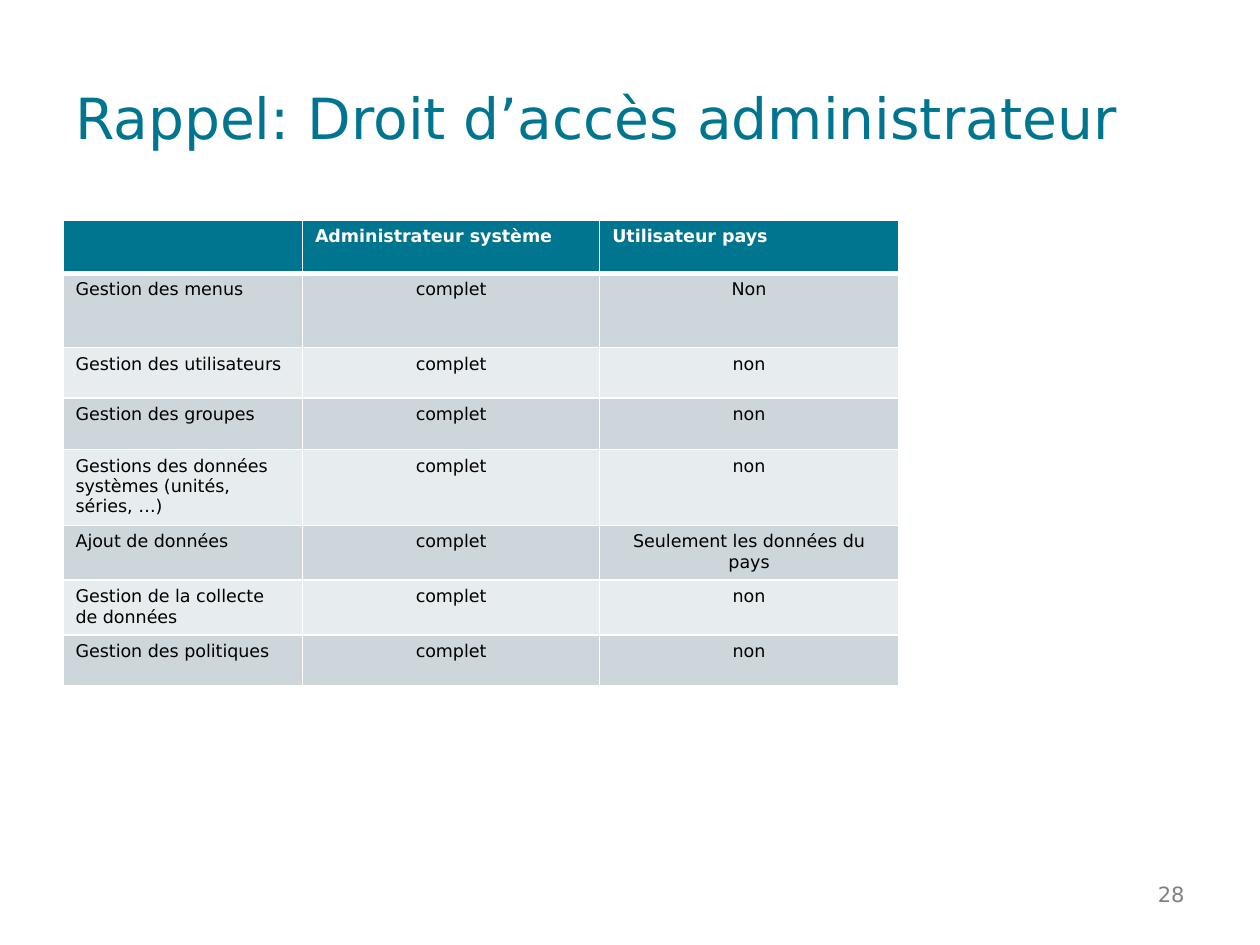
from dataclasses import dataclass

from lxml import etree
from pptx import Presentation
from pptx.dml.color import RGBColor
from pptx.enum.text import MSO_ANCHOR, PP_ALIGN
from pptx.oxml.ns import qn
from pptx.util import Inches, Pt

LEFT, CENTER, RIGHT = PP_ALIGN.LEFT, PP_ALIGN.CENTER, PP_ALIGN.RIGHT
MIDDLE = MSO_ANCHOR.MIDDLE
BLANK_LAYOUT = 6

TITLE = "Rappel: Droit d’accès administrateur"
PAGE_NUMBER = "28"
HEADER = ("", "Administrateur système", "Utilisateur pays")
RIGHTS = [
    ("Gestion des menus", "complet", "Non"),
    ("Gestion des utilisateurs", "complet", "non"),
    ("Gestion des groupes", "complet", "non"),
    ("Gestions des données systèmes (unités, séries, …)", "complet", "non"),
    ("Ajout de données", "complet", "Seulement les données du pays"),
    ("Gestion de la collecte de données", "complet", "non"),
    ("Gestion des politiques", "complet", "non"),
]
COLUMN_WIDTHS = (1.9, 2.36, 2.37)
ROW_HEIGHTS = (0.42, 0.59, 0.4, 0.41, 0.59, 0.42, 0.42, 0.4)


@dataclass(frozen=True)
class Theme:
    font: str = "DejaVu Sans"
    accent: str = "00758F"
    bands: tuple = ("CCD6DB", "E7ECEE")
    white: str = "FFFFFF"
    black: str = "000000"
    muted: str = "808080"
    title_size: float = 32.4
    table_size: float = 10
    number_size: float = 12
    border: float = 1
    header_rule: float = 3


THEME = Theme()


def write(text_frame, text, size, color, alignment=LEFT, bold=False):
    text_frame.text = text
    paragraph = text_frame.paragraphs[0]
    paragraph.alignment = alignment
    for run in paragraph.runs:
        run.font.name = THEME.font
        run.font.size = Pt(size)
        run.font.bold = bold
        run.font.color.rgb = RGBColor.from_string(color)


def add_text(slide, bounds, text, size, color, alignment=LEFT):
    text_frame = slide.shapes.add_textbox(*map(Inches, bounds)).text_frame
    text_frame.word_wrap = True
    text_frame.vertical_anchor = MIDDLE
    write(text_frame, text, size, color, alignment)


def set_borders(cell, top, bottom):
    """Draw white borders; the line elements must precede the cell's fill."""
    properties = cell._tc.get_or_add_tcPr()
    widths = {"lnL": THEME.border, "lnR": THEME.border, "lnT": top, "lnB": bottom}
    for position, (side, width) in enumerate(widths.items()):
        line = etree.Element(qn(f"a:{side}"), w=str(Pt(width)))
        fill = etree.SubElement(line, qn("a:solidFill"))
        etree.SubElement(fill, qn("a:srgbClr"), val=THEME.white)
        properties.insert(position, line)


def add_rights_table(slide, left, top):
    rows = [HEADER, *RIGHTS]
    table = slide.shapes.add_table(
        len(rows), len(HEADER), Inches(left), Inches(top),
        Inches(sum(COLUMN_WIDTHS)), Inches(sum(ROW_HEIGHTS)),
    ).table
    for column, width in zip(table.columns, COLUMN_WIDTHS):
        column.width = Inches(width)
    for row, height in zip(table.rows, ROW_HEIGHTS):
        row.height = Inches(height)

    for row_index, texts in enumerate(rows):
        is_header = row_index == 0
        fill = THEME.accent if is_header else THEME.bands[(row_index - 1) % 2]
        color = THEME.white if is_header else THEME.black
        top_rule = THEME.header_rule if row_index == 1 else THEME.border
        bottom_rule = THEME.header_rule if is_header else THEME.border
        for column_index, text in enumerate(texts):
            cell = table.cell(row_index, column_index)
            cell.fill.solid()
            cell.fill.fore_color.rgb = RGBColor.from_string(fill)
            set_borders(cell, top_rule, bottom_rule)
            alignment = LEFT if is_header or column_index == 0 else CENTER
            write(cell.text_frame, text, THEME.table_size, color, alignment, is_header)


def main():
    presentation = Presentation()
    presentation.slide_width = Inches(10)
    presentation.slide_height = Inches(7.5)
    slide = presentation.slides.add_slide(presentation.slide_layouts[BLANK_LAYOUT])
    add_text(slide, (0.5, 0.3, 9, 1.25), TITLE, THEME.title_size, THEME.accent)
    add_rights_table(slide, 0.5, 1.75)
    add_text(slide, (8.86, 6.9, 0.64, 0.4), PAGE_NUMBER,
             THEME.number_size, THEME.muted, RIGHT)
    presentation.save("out.pptx")


if __name__ == "__main__":
    main()
